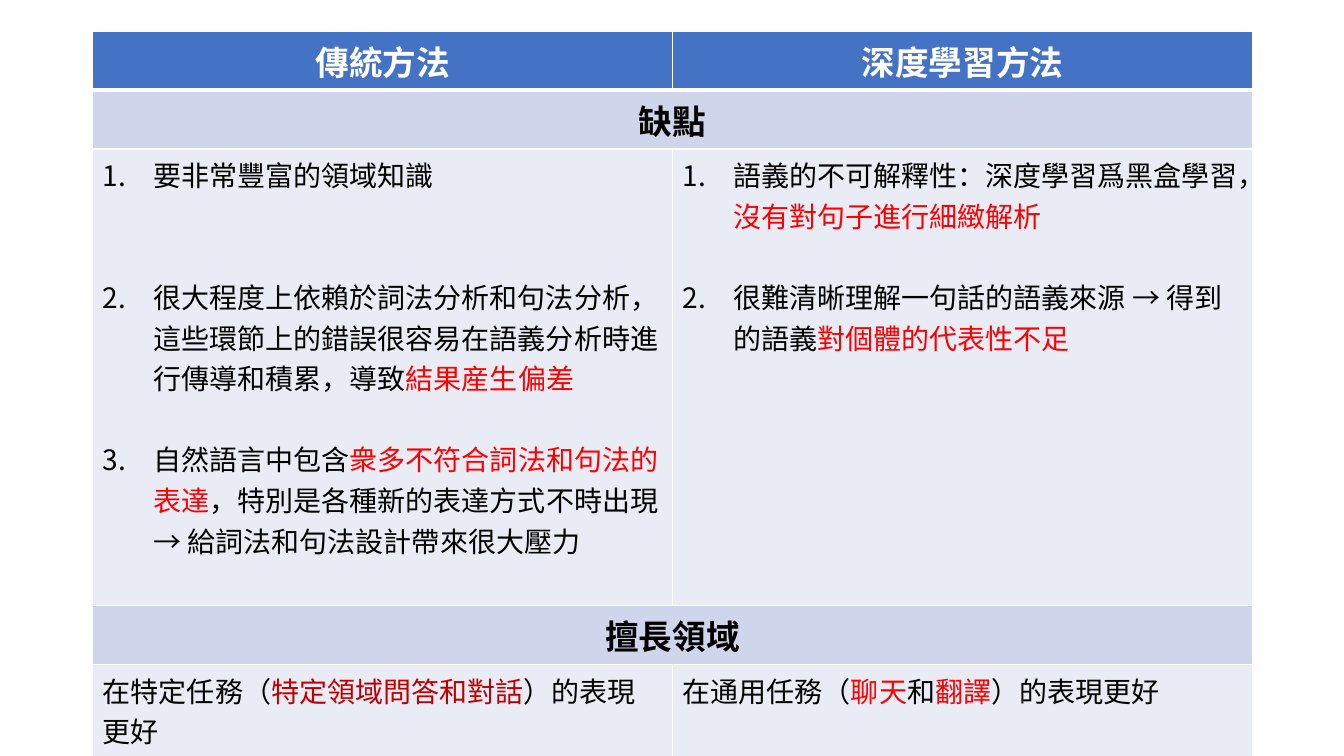
from dataclasses import dataclass
from lxml import etree
from pptx import Presentation
from pptx.dml.color import RGBColor
from pptx.enum.text import PP_ALIGN
from pptx.oxml.ns import qn
from pptx.util import Inches, Pt

CENTER = PP_ALIGN.CENTER
LEFT = PP_ALIGN.LEFT


@dataclass(frozen=True)
class Theme:
    font: str = "Noto Sans CJK TC"
    lang: str = "zh-CN"
    head: str = "4472C4"
    band: str = "CFD5EA"
    pale: str = "E9EBF5"
    white: str = "FFFFFF"
    black: str = "000000"
    red: str = "FF0000"
    dark: str = "C00000"
    title: int = 24
    body: int = 20
    gap: int = 29
    thin: int = 1
    thick: int = 3


THEME = Theme()
WIDTH, HEIGHT = 13.33, 7.5
SIDE, TOP = 0.92, 0.31
COL = 5.75
ROWS = (0.57, 0.58, 4.53, 0.58, 0.93)
INDENT = 0.5

HEADS = ("傳統方法", "深度學習方法")
BANDS = {1: "缺點", 3: "擅長領域"}
FLAWS = (
    (
        (0, [("要非常豐富的領域知識", THEME.black)]),
        (2, [("很大程度上依賴於詞法分析和句法分析，這些環節上的錯誤很容易在語義分析時進行傳導和積累，導致", THEME.black),
             ("結果産生偏差", THEME.red)]),
        (1, [("自然語言中包含", THEME.black),
             ("衆多不符合詞法和句法的表達", THEME.red),
             ("，特別是各種新的表達方式不時出現 → 給詞法和句法設計帶來很大壓力", THEME.black)]),
    ),
    (
        (0, [("語義的不可解釋性：深度學習爲黑盒學習，", THEME.black),
             ("沒有對句子進行細緻解析", THEME.red)]),
        (1, [("很難清晰理解一句話的語義來源 → 得到的語義", THEME.black),
             ("對個體的代表性不足", THEME.red)]),
    ),
)
FIELDS = (
    [("在特定任務（", THEME.black), ("特定領域問答和對話", THEME.dark),
     ("）的表現更好", THEME.black)],
    [("在通用任務（", THEME.black), ("聊天", THEME.red), ("和", THEME.black),
     ("翻譯", THEME.red), ("）的表現更好", THEME.black)],
)


def write(para, text, size=THEME.body, color=THEME.black, bold=False):
    run = para.add_run()
    run.text = text
    font = run.font
    font.name, font.size, font.bold = THEME.font, Pt(size), bold
    font.color.rgb = RGBColor.from_string(color)
    props = run._r.get_or_add_rPr()
    props.set("lang", THEME.lang)
    for tag in ("a:ea", "a:cs"):
        etree.SubElement(props, qn(tag), typeface=THEME.font)


def border(cell, side, width):
    line = etree.SubElement(cell._tc.get_or_add_tcPr(), qn("a:ln" + side),
                            w=str(Pt(width)))
    fill = etree.SubElement(line, qn("a:solidFill"))
    etree.SubElement(fill, qn("a:srgbClr"), val=THEME.white)


def paint(cell, color, top=THEME.thin, base=THEME.thin):
    for side, width in (("L", THEME.thin), ("R", THEME.thin),
                        ("T", top), ("B", base)):
        border(cell, side, width)
    cell.fill.solid()
    cell.fill.fore_color.rgb = RGBColor.from_string(color)


def title(cell, text, color):
    para = cell.text_frame.paragraphs[0]
    para.alignment = CENTER
    write(para, text, size=THEME.title, color=color, bold=True)


def prose(para, parts):
    para.alignment = LEFT
    for text, color in parts:
        write(para, text, color=color)


def number(para):
    props = para._p.get_or_add_pPr()
    props.set("marL", str(Inches(INDENT)))
    props.set("indent", str(-Inches(INDENT)))
    etree.SubElement(props, qn("a:buFont"), typeface=THEME.font)
    etree.SubElement(props, qn("a:buAutoNum"), type="arabicPeriod")


def points(cell, items):
    frame = cell.text_frame
    for index, (gap, parts) in enumerate(items):
        para = frame.add_paragraph() if index else frame.paragraphs[0]
        para.space_before = Pt(gap * THEME.gap)
        number(para)
        prose(para, parts)


def grid(slide):
    frame = slide.shapes.add_table(len(ROWS), len(HEADS), Inches(SIDE), Inches(TOP),
                                   Inches(COL * len(HEADS)), Inches(sum(ROWS)))
    table = frame.table
    for col in table.columns:
        col.width = Inches(COL)
    for row, height in zip(table.rows, ROWS):
        row.height = Inches(height)
    return table


def main():
    deck = Presentation()
    deck.slide_width, deck.slide_height = Inches(WIDTH), Inches(HEIGHT)
    table = grid(deck.slides.add_slide(deck.slide_layouts[6]))
    for col, head in enumerate(HEADS):
        paint(table.cell(0, col), THEME.head, base=THEME.thick)
        title(table.cell(0, col), head, THEME.white)
        for row in range(1, len(ROWS)):
            paint(table.cell(row, col), THEME.band if row in BANDS else THEME.pale,
                  top=THEME.thick if row == 1 else THEME.thin)
        points(table.cell(2, col), FLAWS[col])
        prose(table.cell(4, col).text_frame.paragraphs[0], FIELDS[col])
    for row, text in BANDS.items():
        table.cell(row, 0).merge(table.cell(row, len(HEADS) - 1))
        title(table.cell(row, 0), text, THEME.black)
    deck.save("out.pptx")


if __name__ == "__main__":
    main()
